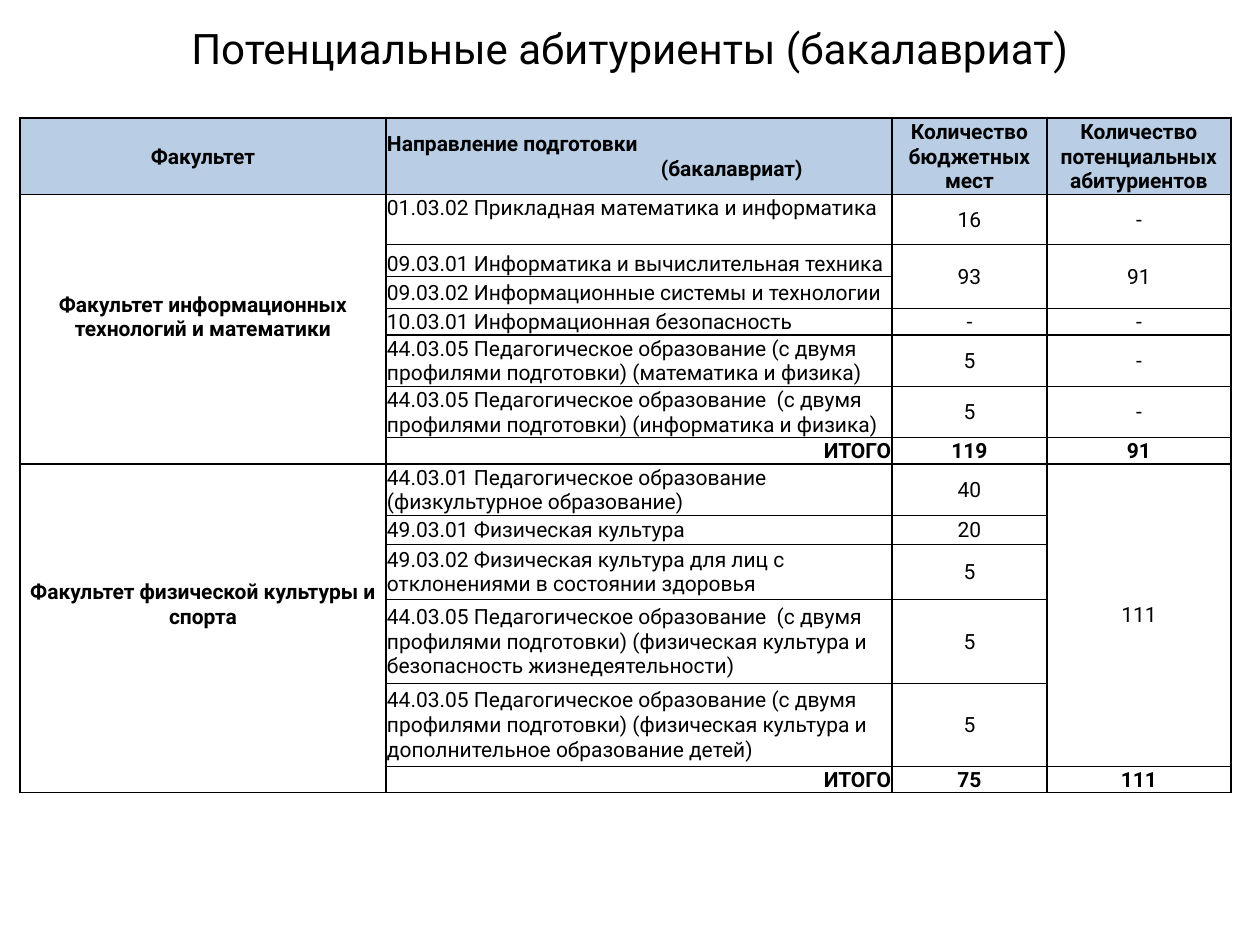
from lxml.etree import SubElement
from pptx import Presentation
from pptx.dml.color import RGBColor
from pptx.enum.text import MSO_ANCHOR, PP_ALIGN
from pptx.oxml.ns import qn
from pptx.util import Pt

PX = 914400 / 126
FONT = "Roboto"


def px(length):
    return round(length * PX)


def style(font, size, bold=False, color="000000"):
    font.name = FONT
    font.size = Pt(size)
    font.bold = bold
    font.color.rgb = RGBColor.from_string(color)


presentation = Presentation()
presentation.slide_width = px(1260)
presentation.slide_height = px(945)
slide = presentation.slides.add_slide(presentation.slide_layouts[6])

title = slide.shapes.add_textbox(0, 0, px(1260), px(96)).text_frame
title.word_wrap = True
title.vertical_anchor = MSO_ANCHOR.MIDDLE
title.text = "Потенциальные абитуриенты (бакалавриат)"
title.paragraphs[0].alignment = PP_ALIGN.CENTER
style(title.paragraphs[0].font, 24)

# None continues the cell above
rows = [
    (75, "Факультет", "Направление подготовки\n(бакалавриат)",
     "Количество бюджетных мест", "Количество потенциальных абитуриентов"),
    (50, "Факультет информационных технологий и математики",
     "01.03.02 Прикладная математика и информатика", "16", "-"),
    (32, None, "09.03.01 Информатика и вычислительная техника", "93", "91"),
    (32, None, "09.03.02 Информационные системы и технологии", None, None),
    (26, None, "10.03.01 Информационная безопасность", "-", "-"),
    (50, None, "44.03.05 Педагогическое образование (с двумя профилями "
     "подготовки) (математика и физика)", "5", "-"),
    (51, None, "44.03.05 Педагогическое образование  (с двумя профилями "
     "подготовки) (информатика и физика)", "5", "-"),
    (25, None, "ИТОГО", "119", "91"),
    (51, "Факультет физической культуры и спорта",
     "44.03.01 Педагогическое образование (физкультурное образование)", "40", "111"),
    (29, None, "49.03.01 Физическая культура", "20", None),
    (55, None, "49.03.02 Физическая культура для лиц с отклонениями "
     "в состоянии здоровья", "5", None),
    (84, None, "44.03.05 Педагогическое образование  (с двумя профилями подготовки) "
     "(физическая культура и безопасность жизнедеятельности)", "5", None),
    (83, None, "44.03.05 Педагогическое образование (с двумя профилями подготовки) "
     "(физическая культура и дополнительное образование детей)", "5", None),
    (25, None, "ИТОГО", "75", "111"),
]
column_widths = [366, 506, 155, 184]
anchors = {1: MSO_ANCHOR.TOP, 2: MSO_ANCHOR.BOTTOM}
faculty_bottom_gaps = {1: 25, 8: 48}

table = slide.shapes.add_table(
    len(rows), len(column_widths), px(20), px(118),
    px(sum(column_widths)), px(sum(row[0] for row in rows))).table
table.first_row = False
table.horz_banding = False
for column, width in zip(table.columns, column_widths):
    column.width = px(width)

for r, (height, *texts) in enumerate(rows):
    table.rows[r].height = px(height)
    for c, text in enumerate(texts):
        cell = table.cell(r, c)
        cell.margin_left = cell.margin_right = cell.margin_top = px(1)
        cell.margin_bottom = 0
        cell.vertical_anchor = MSO_ANCHOR.MIDDLE
        for side in ("a:lnL", "a:lnR", "a:lnT", "a:lnB"):
            border = SubElement(cell._tc.get_or_add_tcPr(), qn(side), w=str(Pt(1)))
            border_fill = SubElement(border, qn("a:solidFill"))
            SubElement(border_fill, qn("a:srgbClr"), val="000000")
        if r == 0:
            cell.fill.solid()
            cell.fill.fore_color.rgb = RGBColor.from_string("B9CDE5")
        else:
            cell.fill.background()
        if text is None:
            continue

        last = r
        while last + 1 < len(rows) and rows[last + 1][c + 1] is None:
            last += 1
        if last > r:
            cell.merge(table.cell(last, c))

        is_total = texts[1] == "ИТОГО"
        cell.text = text
        for paragraph in cell.text_frame.paragraphs:
            if c != 1:
                paragraph.alignment = PP_ALIGN.CENTER
            elif is_total:
                paragraph.alignment = PP_ALIGN.RIGHT
            else:
                paragraph.alignment = PP_ALIGN.LEFT
            style(paragraph.font, 12, bold=r == 0 or c == 0 or is_total)
        if c == 0:
            cell.margin_bottom = px(faculty_bottom_gaps.get(r, 0))
        if c == 1:
            cell.vertical_anchor = anchors.get(r, MSO_ANCHOR.MIDDLE)

degree = table.cell(0, 1).text_frame.paragraphs[1]
degree._p.get_or_add_pPr().set("marL", str(px(274)))

presentation.save("out.pptx")
